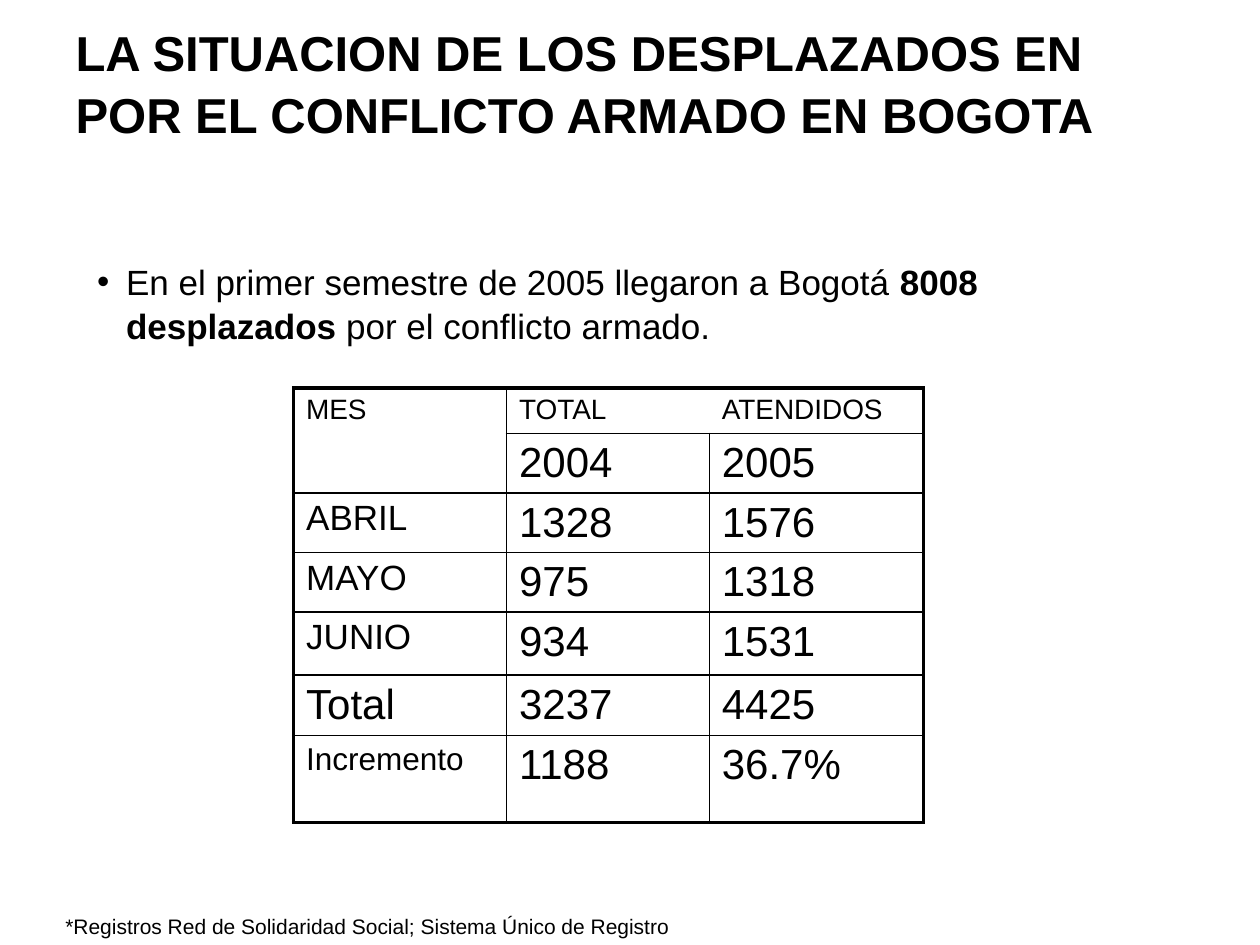
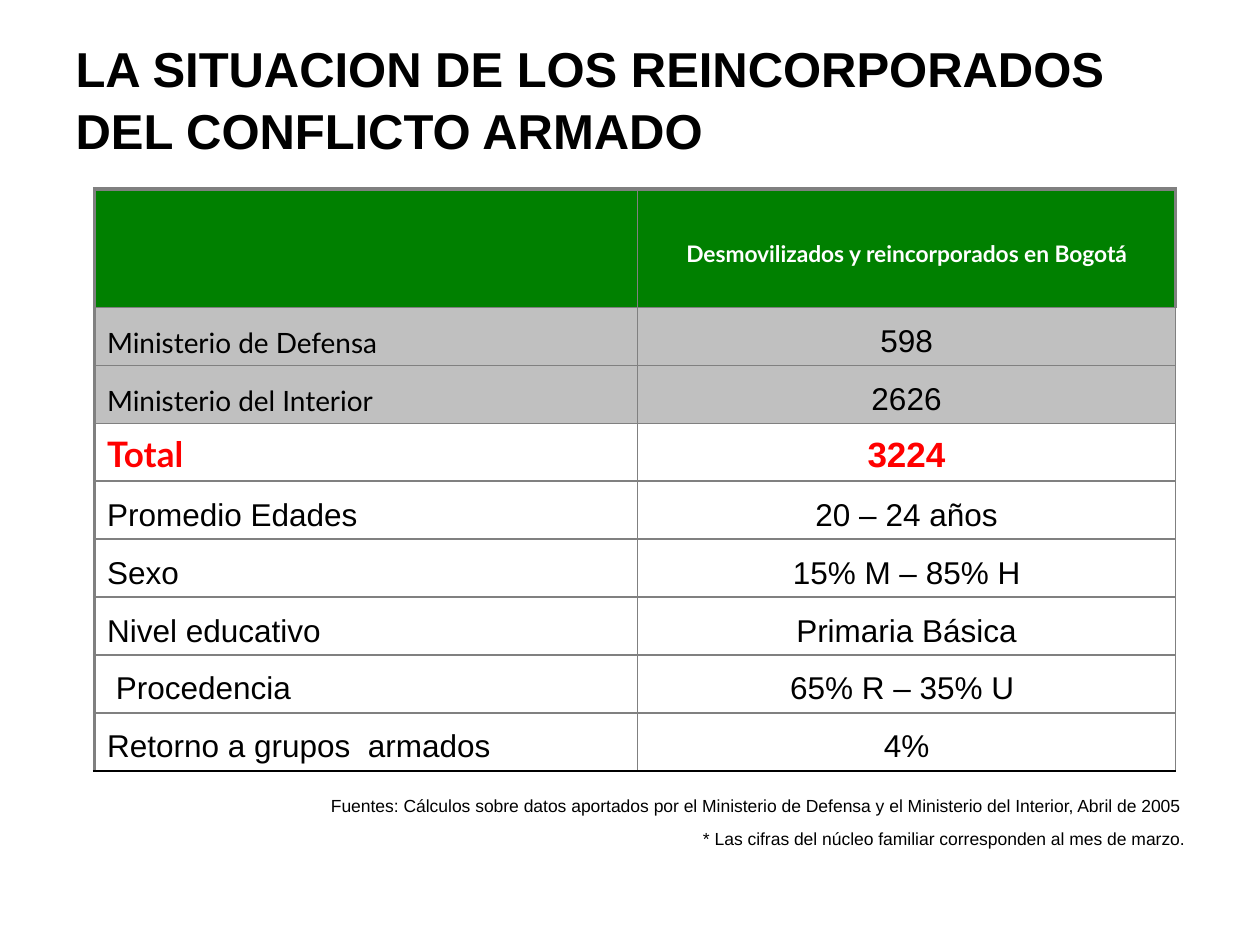
from dataclasses import dataclass, field
from typing import Optional

from lxml.etree import SubElement
from pptx import Presentation
from pptx.dml.color import RGBColor
from pptx.enum.text import MSO_ANCHOR as Anchor, MSO_AUTO_SIZE as AutoSize, PP_ALIGN as Align
from pptx.oxml.ns import qn
from pptx.util import Inches, Pt

BLACK, WHITE, RED = "000000", "FFFFFF", "FF0000"
GREEN, SILVER, GRAY = "008000", "C0C0C0", "808080"
TITLE_AND_BODY, TITLE_ONLY = 1, 5
LINE_SPACING = 1.05


@dataclass(frozen=True)
class Style:
    size: float
    bold: bool = False
    color: str = BLACK
    font: str = "Arial"


@dataclass(frozen=True)
class Line:
    color: str
    width: float


@dataclass(frozen=True)
class Cell:
    text: str
    style: Style
    fill: Optional[str] = None
    align: Align = Align.LEFT
    bottom_margin: float = 0.05


@dataclass(frozen=True)
class Borders:
    """Lines by side (L, R, T, B) and inside; exceptions are keyed by (row, column, side)."""
    inner: Optional[Line] = None
    outer: dict = field(default_factory=dict)
    exceptions: dict = field(default_factory=dict)

    def line_at(self, row: int, col: int, side: str, rows: int, cols: int) -> Optional[Line]:
        on_edge = {"L": col == 0, "R": col == cols - 1, "T": row == 0, "B": row == rows - 1}
        usual = self.outer.get(side) if on_edge[side] else self.inner
        return self.exceptions.get((row, col, side), usual)


def rgb(color: str) -> RGBColor:
    return RGBColor.from_string(color)


def add_run(paragraph, text: str, style: Style) -> None:
    run = paragraph.add_run()
    run.text = text
    font = run.font
    font.name, font.size, font.bold = style.font, Pt(style.size), style.bold
    font.color.rgb = rgb(style.color)


def place(shape, left: float, top: float, width: float, height: float) -> None:
    shape.left, shape.top = Inches(left), Inches(top)
    shape.width, shape.height = Inches(width), Inches(height)


def add_titled_slide(deck, layout: int, heading: str, height: float):
    slide = deck.slides.add_slide(deck.slide_layouts[layout])
    title = slide.shapes.title
    place(title, 0.5, 0.3, 9, height)
    frame = title.text_frame
    frame.auto_size, frame.vertical_anchor = AutoSize.NONE, Anchor.MIDDLE
    paragraph = frame.paragraphs[0]
    paragraph.alignment, paragraph.line_spacing = Align.LEFT, LINE_SPACING
    add_run(paragraph, heading, Style(28, bold=True))
    return slide


def draw_border(cell, side: str, line: Optional[Line]) -> None:
    width = Pt(line.width) if line else 0
    edge = SubElement(cell._tc.get_or_add_tcPr(), qn(f"a:ln{side}"), w=str(int(width)))
    if line is None:
        SubElement(edge, qn("a:noFill"))
    else:
        solid = SubElement(edge, qn("a:solidFill"))
        SubElement(solid, qn("a:srgbClr"), val=line.color)


def add_grid(slide, left: float, top: float, widths: list[float], heights: list[float],
             rows: list[list[Cell]], borders: Borders, anchor: Anchor) -> None:
    grid = slide.shapes.add_table(len(rows), len(widths), Inches(left), Inches(top),
                                  Inches(sum(widths)), Inches(sum(heights))).table
    grid.first_row = grid.horz_banding = False
    for column, width in zip(grid.columns, widths):
        column.width = Inches(width)
    for row, height in zip(grid.rows, heights):
        row.height = Inches(height)
    for r, row_content in enumerate(rows):
        for c, content in enumerate(row_content):
            cell = grid.cell(r, c)
            for side in "LRTB":
                draw_border(cell, side, borders.line_at(r, c, side, len(rows), len(widths)))
            if content.fill:
                cell.fill.solid()
                cell.fill.fore_color.rgb = rgb(content.fill)
            else:
                cell.fill.background()
            cell.vertical_anchor = anchor
            cell.margin_bottom = Inches(content.bottom_margin)
            paragraph = cell.text_frame.paragraphs[0]
            paragraph.alignment = content.align
            if content.text:
                add_run(paragraph, content.text, content.style)


def add_displaced_summary(slide) -> None:
    body = slide.placeholders[1]
    place(body, 0.67, 2, 8.42, 0.77)
    frame = body.text_frame
    frame.auto_size, frame.vertical_anchor = AutoSize.NONE, Anchor.TOP
    paragraph = frame.paragraphs[0]
    properties = paragraph._p.get_or_add_pPr()
    properties.set("marL", str(Inches(0.23)))
    properties.set("indent", str(-Inches(0.23)))
    SubElement(properties, qn("a:buChar"), char="•")
    paragraph.space_before, paragraph.line_spacing = Pt(0), LINE_SPACING
    for text, bold in (("En el primer semestre de 2005 llegaron a Bogotá ", False),
                       ("8008 desplazados", True),
                       (" por el conflicto armado.", False)):
        add_run(paragraph, text, Style(20, bold))


def add_monthly_arrivals(slide) -> None:
    heading, figure = Style(16), Style(24)
    months = [("", 24, "2004", "2005"), ("ABRIL", 20, "1328", "1576"),
              ("MAYO", 20, "975", "1318"), ("JUNIO", 20, "934", "1531"),
              ("Total", 24, "3237", "4425"), ("Incremento", 18, "1188", "36.7%")]
    rows = [[Cell(text, heading) for text in ("MES", "TOTAL", "ATENDIDOS")]]
    rows += [[Cell(month, Style(size)), Cell(before, figure), Cell(after, figure)]
             for month, size, before, after in months]
    open_edges = [(0, 0, "B"), (1, 0, "T"), (0, 1, "R"), (0, 2, "L")]
    borders = Borders(Line(BLACK, 1), dict.fromkeys("LRTB", Line(BLACK, 2.25)),
                      dict.fromkeys(open_edges))
    add_grid(slide, 2.33, 3.08, [1.69, 1.61, 1.7],
             [0.36, 0.47, 0.47, 0.47, 0.5, 0.48, 0.69], rows, borders, Anchor.TOP)


def add_registry_note(slide) -> None:
    note = slide.shapes.add_textbox(Inches(0.42), Inches(7.2), Inches(5.36), Inches(0.3))
    note.text_frame.word_wrap = True
    add_run(note.text_frame.paragraphs[0],
            "*Registros Red de Solidaridad Social; Sistema Único de Registro", Style(12))


def add_reintegrated_profile(slide) -> None:
    plain, ministry = Style(18), Style(16, font="Lato")
    header = Style(13, True, WHITE, "Lato")
    profile = [
        ("Ministerio de Defensa", ministry, "598", plain, SILVER),
        ("Ministerio del Interior", ministry, "2626", plain, SILVER),
        ("Total", Style(20, True, RED, "Lato"), "3224", Style(20, True, RED), WHITE),
        ("Promedio Edades", plain, "20 – 24 años", plain, WHITE),
        ("Sexo", plain, "15% M – 85% H", plain, WHITE),
        ("Nivel educativo", plain, "Primaria Básica", plain, WHITE),
        (" Procedencia", plain, "65% R – 35% U ", plain, WHITE),
        ("Retorno a grupos  armados", plain, "4%", plain, WHITE),
    ]
    rows = [[Cell("", header, GREEN),
             Cell("Desmovilizados y reincorporados en Bogotá", header, GREEN,
                  Align.CENTER, bottom_margin=0.32)]]
    rows += [[Cell(label, label_style, fill), Cell(value, value_style, fill, Align.CENTER)]
             for label, label_style, value, value_style, fill in profile]
    thin, thick = Line(GRAY, 1), Line(GRAY, 2)
    borders = Borders(thin, {"L": thick, "T": thick, "R": thin, "B": Line(BLACK, 1)},
                      {(0, 1, "R"): thick})
    add_grid(slide, 0.75, 1.5, [4.31, 4.27], [0.94] + [0.46] * len(profile),
             rows, borders, Anchor.BOTTOM)


def add_sources(slide) -> None:
    sources = ["Fuentes: Cálculos sobre datos aportados por el Ministerio de Defensa "
               "y el Ministerio del Interior, Abril de 2005 ",
               "* Las cifras del núcleo familiar corresponden al mes de marzo."]
    rows = [[Cell(source, Style(10), align=Align.RIGHT)] for source in sources]
    add_grid(slide, 0.9, 6.27, [8.6], [0.26] * len(rows), rows, Borders(), Anchor.BOTTOM)


def main() -> None:
    deck = Presentation()
    deck.slide_width, deck.slide_height = Inches(10), Inches(7.5)

    displaced = add_titled_slide(
        deck, TITLE_AND_BODY,
        "LA SITUACION DE LOS DESPLAZADOS EN POR EL CONFLICTO ARMADO EN BOGOTA", 0.69)
    add_monthly_arrivals(displaced)
    add_registry_note(displaced)
    add_displaced_summary(displaced)

    reintegrated = add_titled_slide(
        deck, TITLE_ONLY, "LA SITUACION DE LOS REINCORPORADOS DEL CONFLICTO ARMADO", 0.95)
    add_reintegrated_profile(reintegrated)
    add_sources(reintegrated)

    deck.save("out.pptx")


if __name__ == "__main__":
    main()
